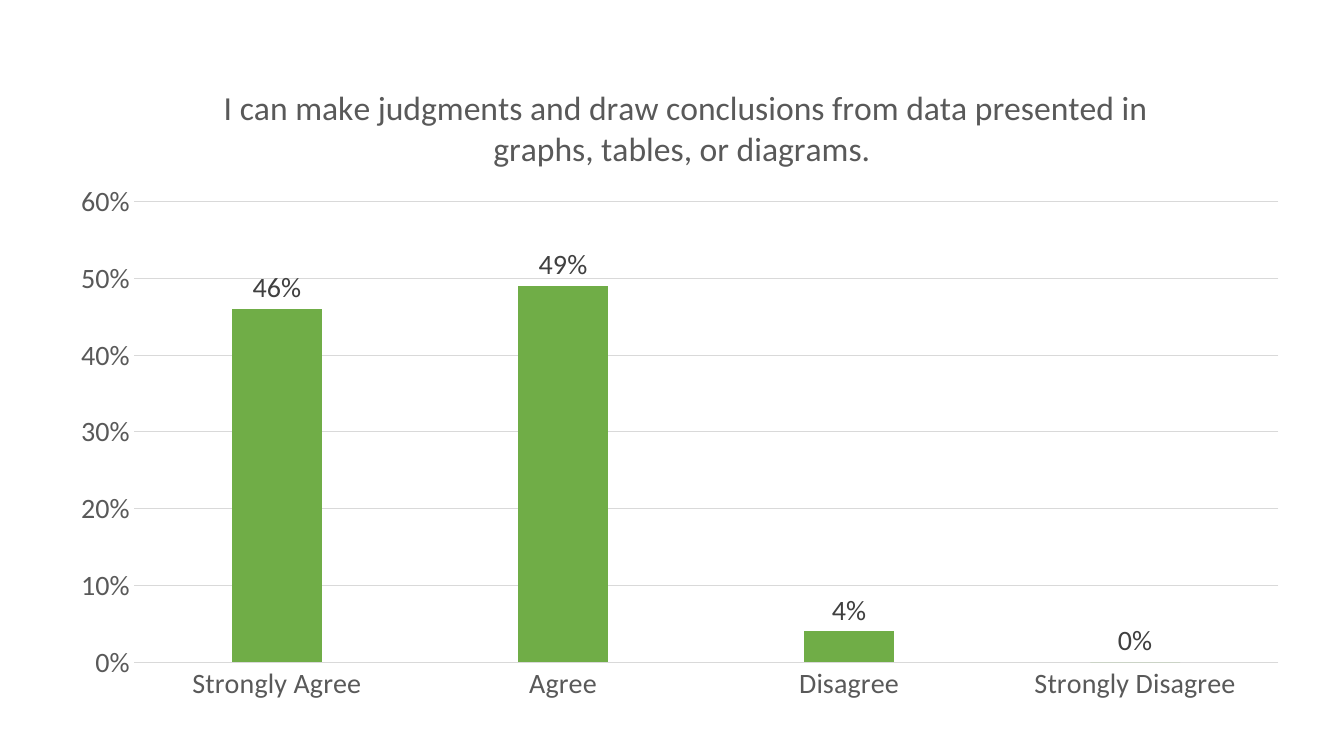
from lxml import etree
from pptx import Presentation
from pptx.chart.data import CategoryChartData
from pptx.dml.color import RGBColor
from pptx.enum.chart import XL_CHART_TYPE, XL_LABEL_POSITION, XL_TICK_MARK
from pptx.oxml.ns import qn
from pptx.util import Emu, Pt

COLUMN = XL_CHART_TYPE.COLUMN_CLUSTERED
OUTSIDE = XL_LABEL_POSITION.OUTSIDE_END
NO_TICK = XL_TICK_MARK.NONE

# Content
TITLE = "I can make judgments and draw conclusions from data presented in graphs, tables, or diagrams. "
ANSWERS = [
    ("Strongly Agree", 0.46),
    ("Agree", 0.49),
    ("Disagree", 0.04),
    ("Strongly Disagree", 0),
]
FONT, GREEN, GRAY, DARK, PALE = "Calibri", "70AD47", "595959", "404040", "D9D9D9"

# Lengths in px, 100 to the inch
SCALE = 9144
SLIDE = (1333, 750)
FRAME = (56, 50, 1237, 659)
PLOT = (133, 200, 1135, 457)
HEAD = (216, 78)


def px(n):
    return Emu(n * SCALE)


def color(code):
    return RGBColor.from_string(code)


def style(font, size, code):
    font.name, font.size, font.bold = FONT, Pt(size), False
    font.color.rgb = color(code)


def rule(line):
    line.color.rgb = color(PALE)
    line.width = Pt(0.75)


def place(node, box, inner=False):
    """Fix a chart part at a box given in slide px."""
    left, top, wide, high = FRAME
    shares = [(box[0] - left) / wide, (box[1] - top) / high]
    shares += [n / full for n, full in zip(box[2:], (wide, high))]
    for old in node.findall(qn("c:layout")):
        node.remove(old)
    layout = etree.Element(qn("c:layout"))
    manual = etree.SubElement(layout, qn("c:manualLayout"))
    parts = [("layoutTarget", "inner")] if inner else []
    parts += [("xMode", "edge"), ("yMode", "edge")]
    parts += [(key, f"{n:.4f}") for key, n in zip("xywh", shares)]
    for key, val in parts:
        etree.SubElement(manual, qn("c:" + key)).set("val", val)
    text = node.find(qn("c:tx"))
    node.insert(0 if text is None else 1, layout)


# Slide
deck = Presentation()
deck.slide_width, deck.slide_height = map(px, SLIDE)
slide = deck.slides.add_slide(deck.slide_layouts[6])

# Chart
data = CategoryChartData(number_format="0%")
data.categories = [name for name, _ in ANSWERS]
data.add_series("Series 1", [share for _, share in ANSWERS])
chart = slide.shapes.add_chart(COLUMN, *map(px, FRAME), data).chart
style(chart.font, 20, GRAY)
chart.has_legend = False

# Title
chart.has_title = True
title = chart.chart_title
title.include_in_layout = False
title.text_frame.text = TITLE
style(title.text_frame.paragraphs[0].runs[0].font, 24, GRAY)
place(title._element, HEAD)

# Axes
answer, share = chart.category_axis, chart.value_axis
for axis in (answer, share):
    axis.major_tick_mark = axis.minor_tick_mark = NO_TICK
    style(axis.tick_labels.font, 20, GRAY)
rule(answer.format.line)
share.format.line.fill.background()
rule(share.major_gridlines.format.line)
share.minimum_scale, share.maximum_scale, share.major_unit = 0, 0.6, 0.1
share.tick_labels.number_format = "0%"
share.tick_labels.number_format_is_linked = False

# Bars and labels
plot = chart.plots[0]
plot.gap_width, plot.overlap = 219, -27
plot.vary_by_categories = False
bars = plot.series[0]
bars.format.fill.solid()
bars.format.fill.fore_color.rgb = color(GREEN)
labels = bars.data_labels
labels.show_value = True
labels.position = OUTSIDE
labels.number_format = "0%"
labels.number_format_is_linked = False
style(labels.font, 20, DARK)
place(answer._element.getparent(), PLOT, inner=True)

deck.save("out.pptx")
